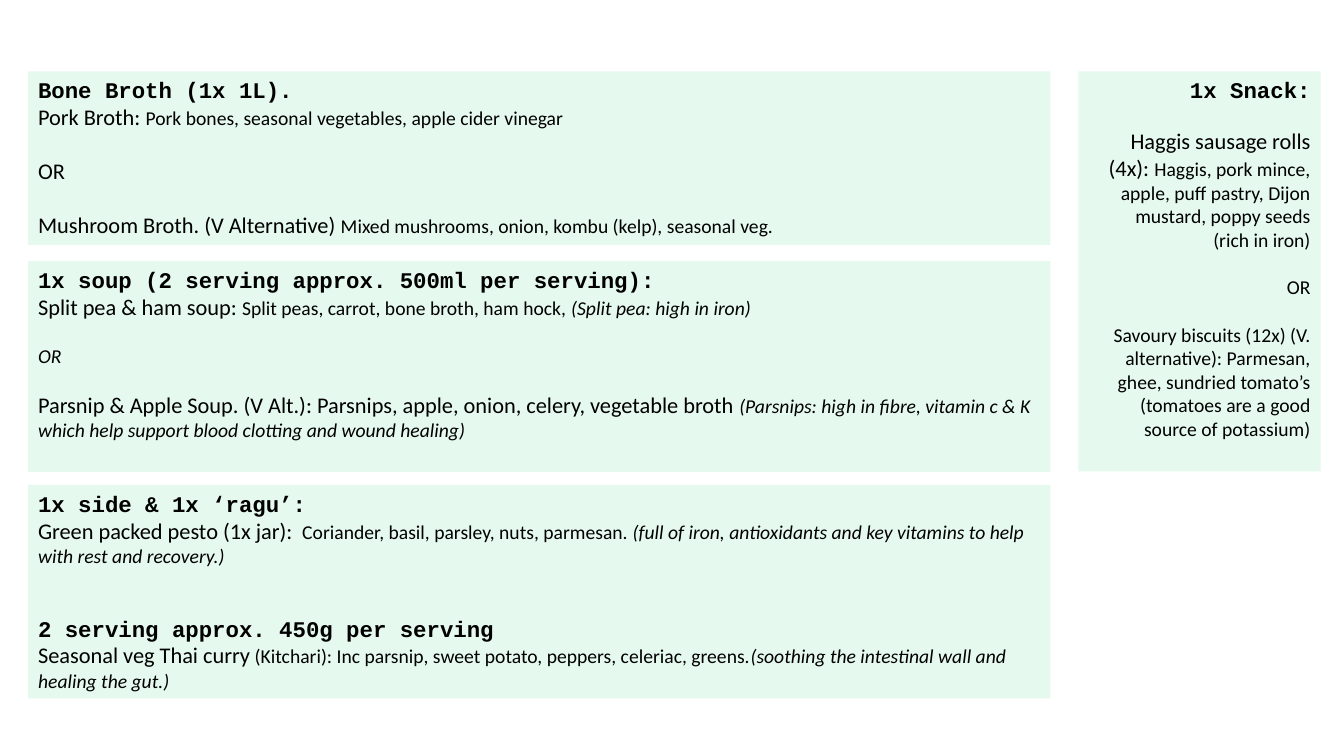
import dataclasses

import lxml.etree
import pptx
import pptx.dml.color
import pptx.enum.shapes
import pptx.enum.text
import pptx.oxml.ns
import pptx.slide
import pptx.text.text
import pptx.util

Cm = pptx.util.Cm
Align = pptx.enum.text.PP_ALIGN
COLOURS = {"panel": "00CC66", "text": "000000"}
PANEL_OPACITY = 10
SMALL_GAP, LARGE_GAP = 17, 19.5
COLUMN_LEFT, COLUMN_WIDTH = 0.71, 25.76
FIRST_TOP = 1.8


@dataclasses.dataclass(frozen=True)
class Phrase:
    text: str
    size: int = 14
    font: str = "Calibri"
    bold: bool = False
    italic: bool = False


@dataclasses.dataclass(frozen=True)
class Line:
    phrases: list[Phrase]
    gap: float = 0


@dataclasses.dataclass(frozen=True)
class Panel:
    left: float
    top: float
    width: float
    height: float
    lines: list[Line]
    align: Align = Align.LEFT


def heading(text: str, gap: float = 0) -> Line:
    return Line([Phrase(text, 16, "Courier New", bold=True)], gap)


def dish(name: str, details: str = "", benefit: str = "", gap: float = 0) -> Line:
    phrases = [Phrase(name, 16), Phrase(details), Phrase(benefit, italic=True)]
    return Line([phrase for phrase in phrases if phrase.text], gap)


def note(text: str, gap: float = 0, italic: bool = False) -> Line:
    return Line([Phrase(text, italic=italic)], gap)


PANELS = [
    Panel(27.18, FIRST_TOP, 6.1, 10.08, [
        heading("1x Snack:"),
        dish("Haggis sausage rolls (4x): ",
             "Haggis, pork mince, apple, puff pastry, Dijon mustard, poppy seeds",
             gap=SMALL_GAP),
        note("(rich in iron)"),
        note("OR", SMALL_GAP),
        note("Savoury biscuits (12x) (V. alternative): Parmesan, ghee, sundried tomato’s",
             SMALL_GAP),
        note("(tomatoes are a good source of potassium)"),
    ], Align.RIGHT),
    Panel(COLUMN_LEFT, FIRST_TOP, COLUMN_WIDTH, 4.37, [
        heading("Bone Broth (1x 1L)."),
        dish("Pork Broth: ", "Pork bones, seasonal vegetables, apple cider vinegar"),
        dish("OR", gap=LARGE_GAP),
        dish("Mushroom Broth. (V Alternative) ",
             "Mixed mushrooms, onion, kombu (kelp), seasonal veg.", gap=LARGE_GAP),
    ]),
    Panel(COLUMN_LEFT, 6.58, COLUMN_WIDTH, 5.31, [
        heading("1x soup (2 serving approx. 500ml per serving):"),
        dish("Split pea & ham soup: ", "Split peas, carrot, bone broth, ham hock, ",
             "(Split pea: high in iron)"),
        note("OR", SMALL_GAP, italic=True),
        dish("Parsnip & Apple Soup. (V Alt.): Parsnips, apple, onion, celery, vegetable broth ",
             benefit="(Parsnips: high in fibre, vitamin c & K which help support "
                     "blood clotting and wound healing)",
             gap=SMALL_GAP),
    ]),
    Panel(COLUMN_LEFT, 12.22, COLUMN_WIDTH, 5.38, [
        heading("1x side & 1x ‘ragu’:"),
        dish("Green packed pesto (1x jar): ",
             " Coriander, basil, parsley, nuts, parmesan. ",
             "(full of iron, antioxidants and key vitamins to help with rest and recovery.)"),
        heading("2 serving approx. 450g per serving", 2 * SMALL_GAP),
        dish("Seasonal veg Thai curry",
             " (Kitchari): Inc parsnip, sweet potato, peppers, celeriac, greens.",
             "(soothing the intestinal wall and healing the gut.)"),
    ]),
]


def write_line(paragraph: pptx.text.text._Paragraph, line: Line, align: Align) -> None:
    paragraph.alignment = align
    paragraph.space_before = pptx.util.Pt(line.gap)
    for phrase in line.phrases:
        run = paragraph.add_run()
        run.text = phrase.text
        run.font.name = phrase.font
        run.font.size = pptx.util.Pt(phrase.size)
        run.font.bold = phrase.bold
        run.font.italic = phrase.italic
        run.font.color.rgb = pptx.dml.color.RGBColor.from_string(COLOURS["text"])


def draw_panel(slide: pptx.slide.Slide, panel: Panel) -> None:
    box = slide.shapes.add_shape(
        pptx.enum.shapes.MSO_SHAPE.RECTANGLE,
        Cm(panel.left), Cm(panel.top), Cm(panel.width), Cm(panel.height))
    box.shadow.inherit = False
    box.line.fill.background()
    box.fill.solid()
    box.fill.fore_color.rgb = pptx.dml.color.RGBColor.from_string(COLOURS["panel"])
    tint = box.fill._xPr.find(".//" + pptx.oxml.ns.qn("a:srgbClr"))
    lxml.etree.SubElement(tint, pptx.oxml.ns.qn("a:alpha"), val=str(PANEL_OPACITY * 1000))
    frame = box.text_frame
    frame.word_wrap = True
    frame.auto_size = pptx.enum.text.MSO_AUTO_SIZE.NONE
    frame.vertical_anchor = pptx.enum.text.MSO_ANCHOR.TOP
    for index, line in enumerate(panel.lines):
        paragraph = frame.add_paragraph() if index else frame.paragraphs[0]
        write_line(paragraph, line, panel.align)


def main() -> None:
    presentation = pptx.Presentation()
    presentation.slide_width = Cm(33.87)
    presentation.slide_height = Cm(19.05)
    menu = presentation.slides.add_slide(presentation.slide_layouts[6])
    for panel in PANELS:
        draw_panel(menu, panel)
    presentation.save("out.pptx")


if __name__ == "__main__":
    main()
